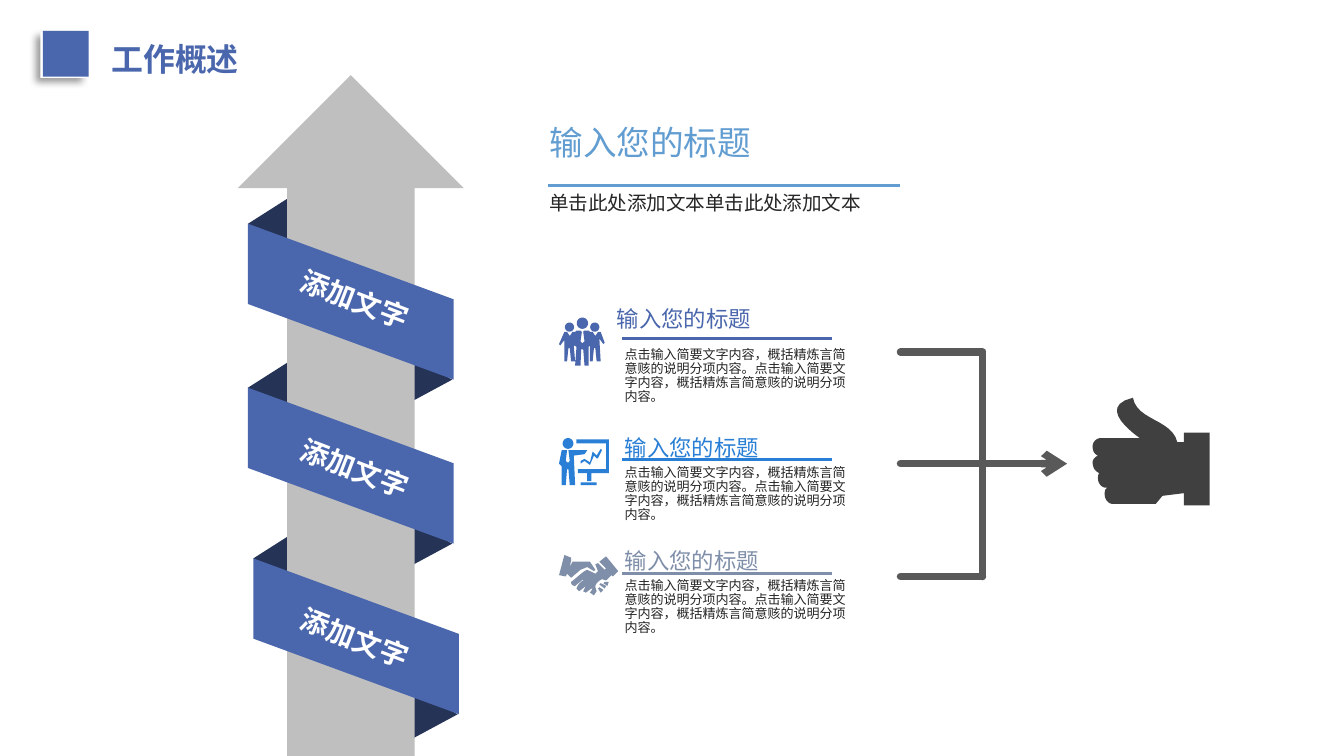
from dataclasses import dataclass
from math import cos, pi, sin

from lxml import etree
from pptx import Presentation
from pptx.dml.color import RGBColor
from pptx.enum.shapes import MSO_CONNECTOR, MSO_SHAPE
from pptx.enum.text import MSO_ANCHOR, MSO_AUTO_SIZE, PP_ALIGN
from pptx.oxml.ns import qn
from pptx.util import Inches, Pt

RECT, TRIANGLE = MSO_SHAPE.RECTANGLE, MSO_SHAPE.ISOSCELES_TRIANGLE
ARROW, SLANT = MSO_SHAPE.UP_ARROW, MSO_SHAPE.PARALLELOGRAM
STRAIGHT = MSO_CONNECTOR.STRAIGHT
TOP, LEFT, CENTER = MSO_ANCHOR.TOP, PP_ALIGN.LEFT, PP_ALIGN.CENTER
FIT, FIXED = MSO_AUTO_SIZE.SHAPE_TO_FIT_TEXT, MSO_AUTO_SIZE.NONE

BLUE, NAVY, SKY, AZURE, SLATE = "4A66AC", "253356", "629DD1", "297FD5", "7F8FA9"
WHITE, SILVER, INK, STEEL, COAL = "FFFFFF", "BFBFBF", "262626", "595959", "404040"
HEAD = "输入您的标题"
BODY = "点击输入简要文字内容，概括精炼言简意赅的说明分项内容。" * 2


@dataclass
class Ribbon:
    x: float
    y: float
    text_y: float


@dataclass
class Item:
    color: str
    x: float
    head_y: float
    rule_y: float
    body_y: float
    icon: list


def tint(fmt, color: str) -> None:
    fmt.solid()
    fmt.fore_color.rgb = RGBColor.from_string(color)


def plain(shape, color: str) -> None:
    """Flat fill without line or shadow."""
    shape.shadow.inherit = False
    tint(shape.fill, color)
    shape.line.fill.background()


def draw(kind, box: tuple, color: str, turn: float = 0, adj: tuple = ()):
    shape = slide.shapes.add_shape(kind, *map(Inches, box))
    plain(shape, color)
    shape.rotation = turn
    for i, value in enumerate(adj):
        shape.adjustments[i] = value
    return shape


def fill_text(shape, text: str, color: str, size: float, bold: bool = False,
              wrap: bool = True, align=LEFT, space: float = 1) -> None:
    frame = shape.text_frame
    for key, value in {"word_wrap": wrap, "auto_size": FIXED if wrap else FIT,
                       "vertical_anchor": TOP, "margin_right": Inches(0.05 if wrap else 0.1)}.items():
        setattr(frame, key, value)
    par = frame.paragraphs[0]
    par.alignment, par.line_spacing = align, space
    run = par.add_run()
    run.text = text
    for key, value in {"name": "Arial", "size": Pt(size), "bold": bold}.items():
        setattr(run.font, key, value)
    tint(run.font.fill, color)


def write(box: tuple, text: str, color: str, size: float, turn: float = 0, **fmt) -> None:
    shape = slide.shapes.add_textbox(*map(Inches, box))
    shape.rotation = turn
    fill_text(shape, text, color, size, **fmt)


def rule(start: tuple, end: tuple, color: str, width: float,
         cap: str = "flat", arrow: bool = False) -> None:
    line = slide.shapes.add_connector(STRAIGHT, *map(Inches, start + end))
    tint(line.line.fill, color)
    line.line.width = Pt(width)
    ln = line._element.spPr.find(qn("a:ln"))
    ln.set("cap", cap)
    if arrow:
        etree.SubElement(ln, qn("a:tailEnd"), type="arrow")
    etree.SubElement(line._element.spPr, qn("a:effectLst"))


def dot(x: float, y: float, r: float, n: int = 24) -> list:
    return [(x + r * cos(2 * pi * i / n), y + r * sin(2 * pi * i / n)) for i in range(n)]


def trace(path: list, steps: int = 12) -> list:
    """Turn points and cubic curves (six numbers) into points."""
    out = []
    for part in path:
        if len(part) == 2:
            out.append(part)
            continue
        nodes = [out[-1], part[:2], part[2:4], part[4:]]
        for i in range(1, steps + 1):
            t = i / steps
            mix = ((1 - t) ** 3, 3 * t * (1 - t) ** 2, 3 * t * t * (1 - t), t ** 3)
            out.append(tuple(sum(m * node[k] for m, node in zip(mix, nodes)) for k in (0, 1)))
    return out


def outline(loops: list, color: str) -> None:
    """Draw closed loops, given in hundredths of an inch, as one shape."""
    loops = [[(x * 100, y * 100) for x, y in loop] for loop in loops]
    pen = slide.shapes.build_freeform(*loops[0][0], scale=Inches(1) / 10000)
    for i, loop in enumerate(loops):
        if i:
            pen.move_to(*loop[0])
        pen.add_line_segments(loop[1:], close=True)
    plain(pen.convert_to_shape(), color)


TEAM = [
    dot(433.4, 240.5, 4.2), dot(442.6, 243.4, 3.4), dot(423.8, 243.4, 3.4),
    [(427, 257), (428, 269), (425, 269), (424, 259), (423, 259), (422, 269), (420, 269),
     (420, 253), (417, 257), (416, 256), (420, 247), (422, 247), (424, 250), (426, 247),
     (428, 247), (429, 246), (432, 246), (433, 247), (432, 254), (433.3, 255.5), (435, 254),
     (434, 247), (434.5, 246), (438, 246), (439, 247), (441, 247), (443, 250), (445, 247),
     (447, 247), (450, 255), (449, 256), (446, 252), (447, 269), (444, 269), (443, 259),
     (442, 259), (441, 269), (439, 269), (439, 257), (438, 258), (438, 272), (435, 272),
     (434, 260), (432.5, 260), (432, 272), (428, 272), (429, 258)],
]
BOARD = [
    dot(422.7, 330, 4),
    [(432, 343), (435, 341.5), (439, 344), (441, 336), (444, 339), (447, 334), (448, 335),
     (445, 341), (444, 341), (442, 339), (439, 346), (435, 343), (432, 345)],
    [(432, 359), (444, 359), (444, 361), (432, 361)],
    [(440, 352), (453, 352), (453, 327), (429, 327), (429, 330), (451, 330), (451, 349),
     (430, 349), (430, 352), (437, 352), (437, 358), (440, 358)],
    [(416, 345), (418, 347), (418, 361), (421, 361), (422, 349), (423, 349), (424, 361),
     (428, 361), (427, 339), (435, 338), (437, 335), (423, 335), (424, 343), (422.7, 344.5),
     (421, 343), (422, 335), (418, 335)],
]
HANDS = [
    [(425, 415), (420, 413), (416, 428), (421, 429), (422, 427), (425, 430), (432, 424),
     (437, 422), (442, 425), (443, 424), (439, 418), (426, 418), (424, 422), (425, 417)],
    trace([(451, 414), (460, 425), (456, 429), (455, 428), (451, 432), (448, 431),
           (446, 432, 443, 434, 443, 437), (444, 440), (442, 443), (439, 441), (441, 438),
           (440, 438), (436, 441), (434, 440), (436, 436), (431, 440), (429, 438),
           (430, 435, 432, 433, 434, 432), (434, 431), (428, 436), (426, 436, 425, 435, 425, 433),
           (428, 431, 432, 427, 435, 425), (437, 424), (443, 427), (445, 425), (443, 420),
           (445, 419), (450, 424), (451, 423), (446, 418)]),
    [(453, 433), (450, 433), (449, 434), (452, 436)],
    [(447, 441), (449, 439), (446, 437), (445, 438)],
    [(450, 438), (451, 436), (447, 434), (446, 435)],
]
THUMB = trace([
    (843, 296), (814, 303, 847, 325, 848, 326), (819, 326), (816, 326, 813, 329, 813, 332),
    (813, 335, 814, 338, 817, 339), (815, 340, 813, 342, 813, 344),
    (813, 348, 815, 351, 818, 352), (817, 353, 817, 355, 817, 356),
    (817, 360, 820, 363, 823, 363), (824, 363), (822, 364, 822, 366, 822, 368),
    (822, 372, 825, 375, 828, 375), (860, 375), (865, 369), (881, 367), (881, 376),
    (900, 376), (900, 322), (881, 322), (881, 329), (876, 329), (872, 312, 846, 313, 843, 296)])
RIBBONS = [Ribbon(2.07, 3.97, 4.57), Ribbon(2.03, 2.7, 3.31), Ribbon(2.03, 1.48, 2.05)]
ITEMS = [
    Item(BLUE, 4.49, 2.22, 2.52, 2.54, TEAM),
    Item(AZURE, 4.55, 3.18, 3.42, 3.42, BOARD),
    Item(SLATE, 4.55, 4.02, 4.27, 4.26, HANDS),
]

deck = Presentation()
deck.slide_width, deck.slide_height = Inches(10), Inches(10 * 9 / 16)
slide = deck.slides.add_slide(deck.slide_layouts[5])

title = slide.shapes.title
title.left, title.top, title.width, title.height = map(Inches, (0.73, 0.19, 4.74, 0.42))
fill_text(title, "工作概述", BLUE, 17.1, bold=True, space=1.2)

back = draw(RECT, (0.3, 0.24, 0.34, 0.34), WHITE)
glow = etree.SubElement(back._element.spPr.find(qn("a:effectLst")), qn("a:outerShdw"),
                        blurRad=str(Pt(4)), dist=str(Pt(3)), dir="8100000")
shade = etree.SubElement(glow, qn("a:srgbClr"), val="000000")
etree.SubElement(shade, qn("a:alpha"), val="40000")
draw(RECT, (0.32, 0.23, 0.34, 0.34), BLUE)

for band in RIBBONS:
    draw(TRIANGLE, (band.x + 0.93, band.y + 1.15, 0.42, 0.39), NAVY, 90)
    draw(TRIANGLE, (band.x - 0.23, band.y + 0.02, 0.42, 0.33), NAVY, 270)
draw(ARROW, (1.77, 0.56, 1.68, 5.17), SILVER, adj=(0.565, 0.5))
for band in RIBBONS:
    draw(SLANT, (band.x, band.y, 1.16, 1.53), BLUE, 90, (0.485,))
    write((2.12, band.text_y, 1.04, 0.35), "添加文字", WHITE, 15, 21,
          bold=True, wrap=False, align=CENTER)

write((3.99, 0.86, 1.72, 0.4), HEAD, SKY, 18, wrap=False)
write((3.99, 1.39, 4.58, 0.26), "单击此处添加文本" * 2, INK, 10.5, space=0.9)
rule((4.08, 1.38), (6.7, 1.38), SKY, 1.75)

for item in ITEMS:
    outline(item.icon, item.color)
    write((item.x, item.head_y, 1.21, 0.3), HEAD, item.color, 12, wrap=False)
    write((4.55, item.body_y, 1.85, 0.53), BODY, INK, 7, space=0.9)
    rule((4.63, item.rule_y), (6.19, item.rule_y), item.color, 1.75)

for y, end in ((2.62, 7.31), (4.29, 7.31), (3.45, 7.94)):
    rule((6.7, y), (end, y), STEEL, 4, "rnd", arrow=end > 7.5)
rule((7.31, 2.62), (7.31, 4.29), STEEL, 4, "rnd")
outline([THUMB], COAL)

deck.save("out.pptx")
